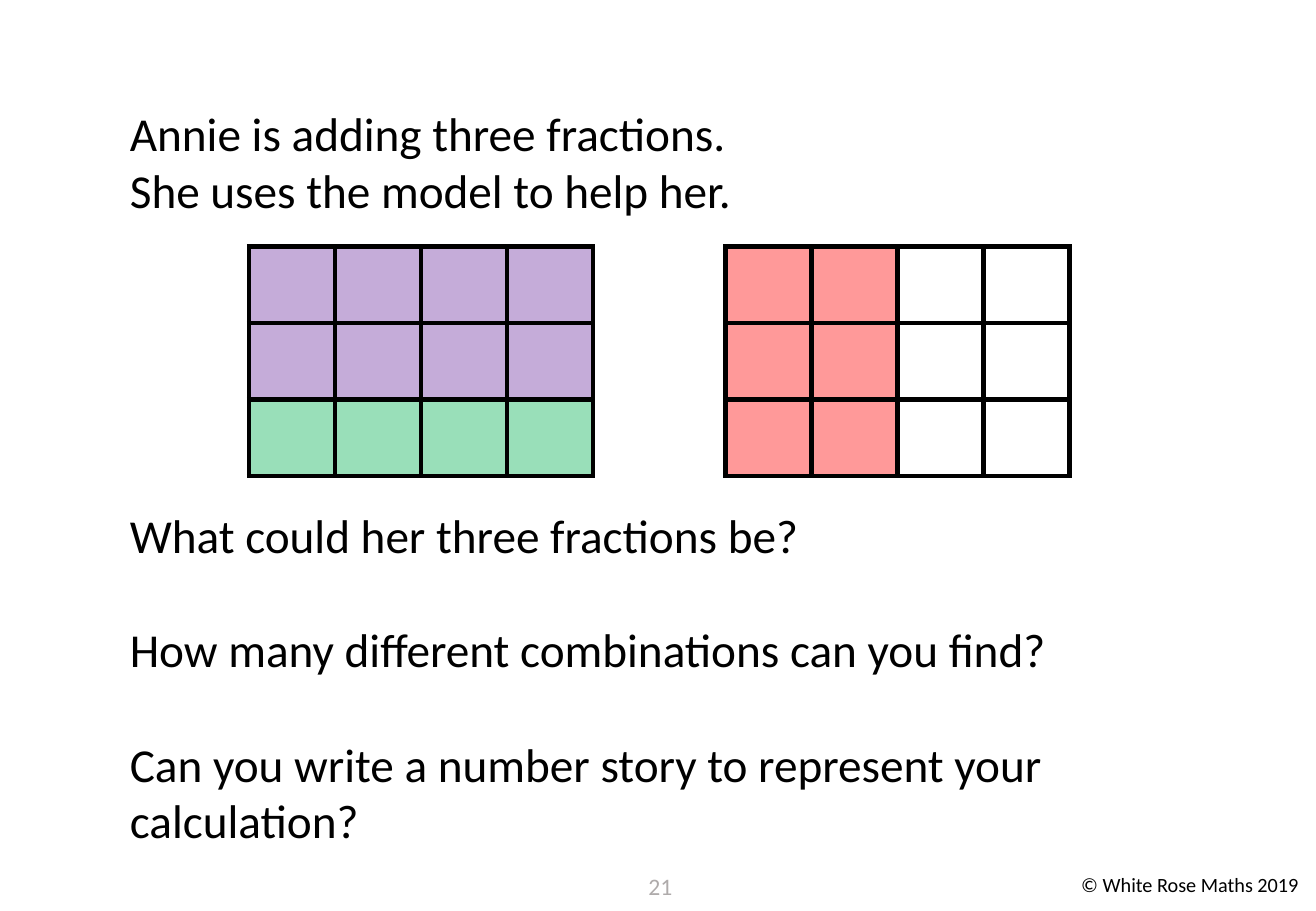
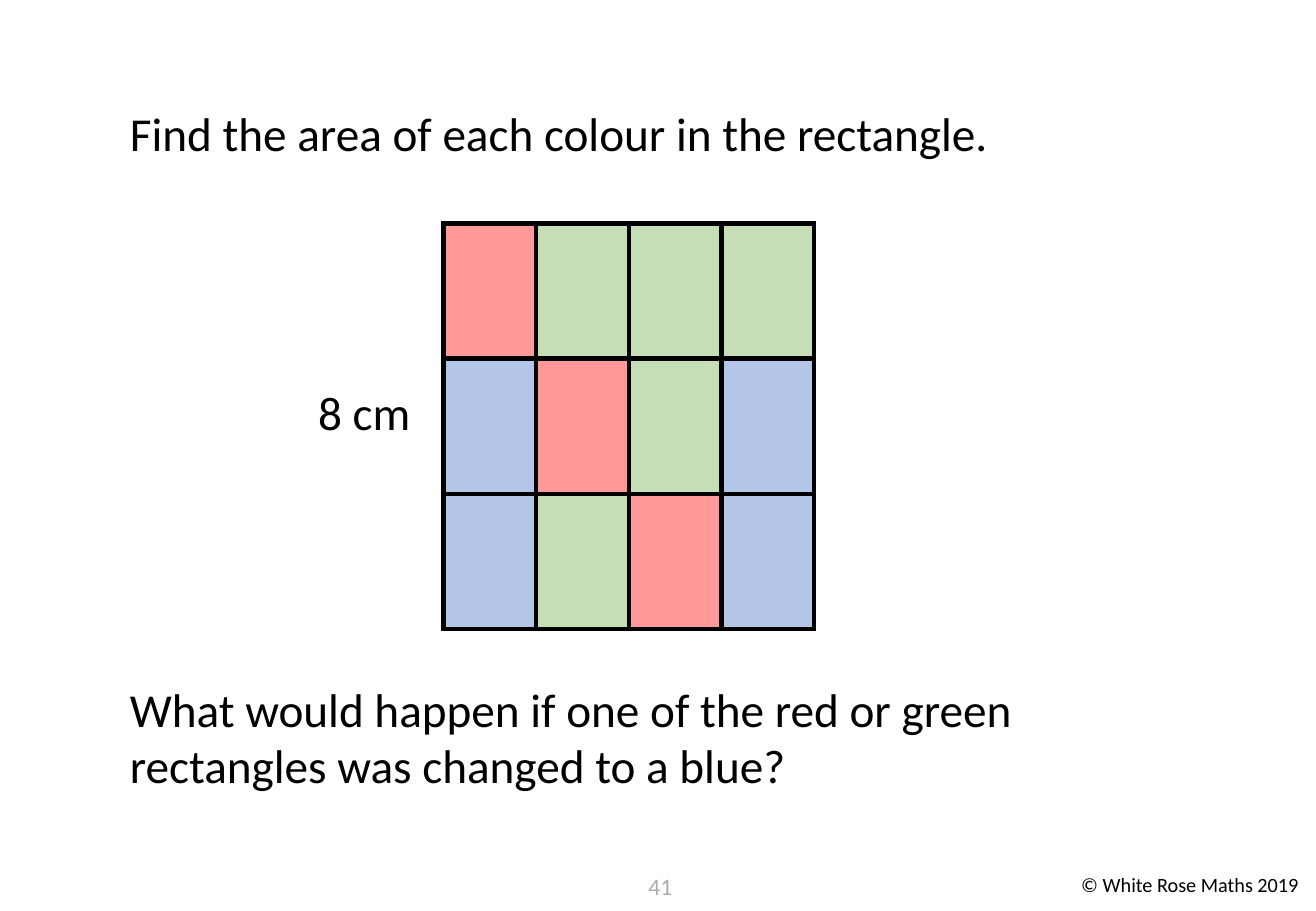
from lxml.etree import SubElement
from pptx import Presentation
from pptx.dml.color import RGBColor
from pptx.enum.text import PP_ALIGN as Align
from pptx.oxml import parse_xml
from pptx.oxml.ns import nsdecls, qn
from pptx.util import Inches, Pt

FONT = "Calibri"
BLACK, GREY = "000000", "AFABAB"
TINTS = {"purple": "7030A0", "mint": "00B050", "red": "FF0000",
         "green": "70AD47", "blue": "4472C4"}
OPACITY = 40
BORDER = 3
BODY_SIZE = 28
BODY_LINE = 34.18
COPYRIGHT = "© White Rose Maths 2019"

SLIDES = [
    {
        "number": "21",
        "body_height": 6.23,
        "body": [
            (0, "Annie is adding three fractions."),
            (0, "She uses the model to help her."),
            (5, "What could her three fractions be?"),
            (1, "How many different combinations can you find?"),
            (1, "Can you write a number story to represent your calculation?"),
        ],
        "grids": [
            ((2.05, 2.03, 2.83, 1.89),
             [["purple"] * 4, ["purple"] * 4, ["mint"] * 4]),
            ((5.97, 2.03, 2.83, 1.89),
             [["red", "red", None, None]] * 3),
        ],
        "labels": [],
    },
    {
        "number": "41",
        "body_height": 5.76,
        "body": [
            (0, "Find the area of each colour in the rectangle."),
            (9, "What would happen if one of the red or green rectangles "
                "was changed to a blue?"),
        ],
        "grids": [
            ((3.65, 1.84, 3.05, 3.34),
             [["red", "green", "green", "green"],
              ["blue", "red", "green", "blue"],
              ["blue", "green", "red", "blue"]]),
        ],
        "labels": [((2.52, 3.11, 1.1, 0.57), "8 cm")],
    },
]


def rgb(colour):
    return RGBColor.from_string(colour)


def add_text(slide, place, lines, size=BODY_SIZE, colour=BLACK, align=Align.LEFT):
    frame = slide.shapes.add_textbox(*map(Inches, place)).text_frame
    frame.word_wrap = True
    for index, (gap, wording) in enumerate(lines):
        paragraph = frame.add_paragraph() if index else frame.paragraphs[0]
        paragraph.alignment = align
        if gap:
            paragraph.space_before = Pt(gap * BODY_LINE)
        run = paragraph.add_run()
        run.text = wording
        run.font.name = FONT
        run.font.size = Pt(size)
        run.font.color.rgb = rgb(colour)


def style_cell(cell, tint):
    if tint:
        cell.fill.solid()
        cell.fill.fore_color.rgb = rgb(TINTS[tint])
    else:
        cell.fill.background()
    properties = cell._tc.get_or_add_tcPr()
    for shade in properties.iter(qn("a:srgbClr")):
        SubElement(shade, qn("a:alpha"), val=str(OPACITY * 1000))
    for index, side in enumerate("LRTB"):
        properties.insert(index, parse_xml(
            f'<a:ln{side} {nsdecls("a")} w="{Pt(BORDER)}"><a:solidFill>'
            f'<a:srgbClr val="{BLACK}"/></a:solidFill></a:ln{side}>'))


def add_grid(slide, place, tints):
    width, height = place[2:]
    grid = slide.shapes.add_table(
        len(tints), len(tints[0]), *map(Inches, place)).table
    grid.first_row = grid.horz_banding = False
    for column in grid.columns:
        column.width = Inches(width / len(tints[0]))
    for row, row_tints in zip(grid.rows, tints):
        row.height = Inches(height / len(tints))
        for cell, tint in zip(row.cells, row_tints):
            style_cell(cell, tint)


def add_footer(slide, number):
    add_text(slide, (8.8, 7.13, 2.03, 0.3), [(0, COPYRIGHT)], size=12)
    add_text(slide, (5.18, 7.13, 0.51, 0.4), [(0, number)],
             size=14, colour=GREY, align=Align.CENTER)


def main():
    deck = Presentation()
    deck.slide_width, deck.slide_height = Inches(10.83), Inches(7.5)
    blank = deck.slide_layouts[6]
    for content in SLIDES:
        slide = deck.slides.add_slide(blank)
        add_footer(slide, content["number"])
        add_text(slide, (0.97, 0.81, 8.81, content["body_height"]), content["body"])
        for place, tints in content["grids"]:
            add_grid(slide, place, tints)
        for place, wording in content["labels"]:
            add_text(slide, place, [(0, wording)])
    deck.save("out.pptx")


if __name__ == "__main__":
    main()
